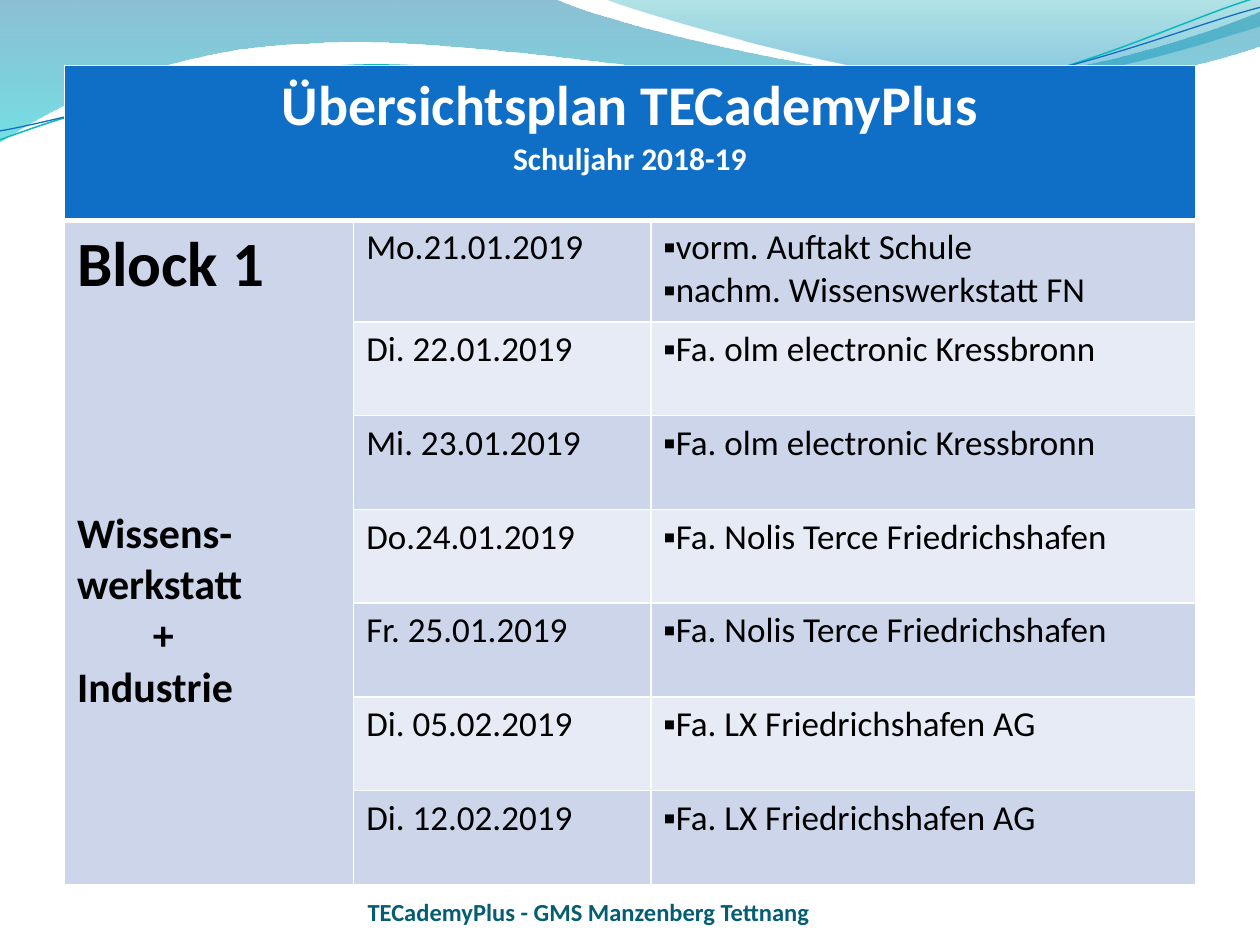
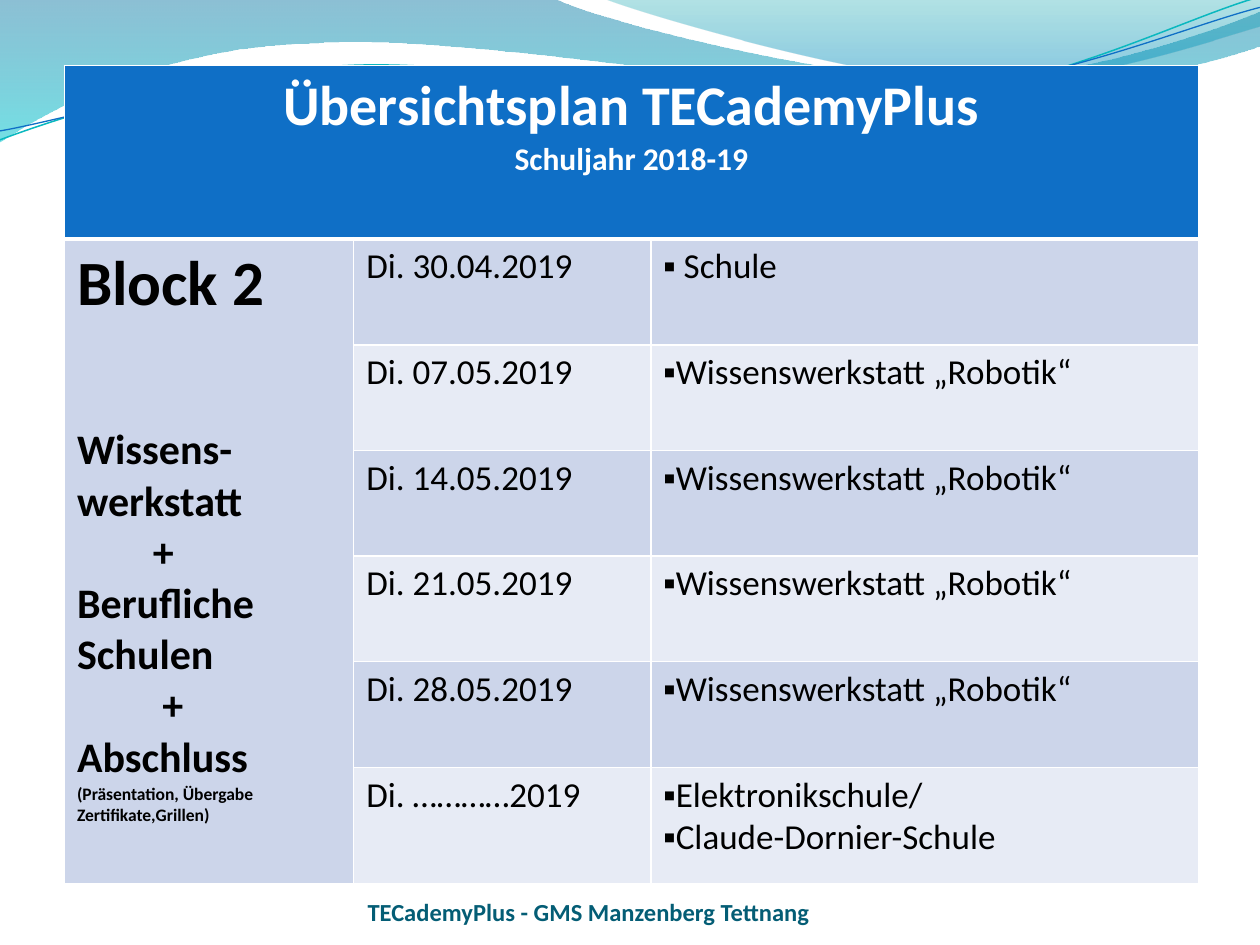
import dataclasses

import pptx
import pptx.dml.color
import pptx.enum.text
import pptx.oxml.ns
import pptx.shapes.autoshape
import pptx.slide
import pptx.table
import pptx.text.text
import pptx.util
from lxml import etree

Cm = pptx.util.Cm
Pt = pptx.util.Pt
RGBColor = pptx.dml.color.RGBColor
qn = pptx.oxml.ns.qn

WHITE = RGBColor(0xFF, 0xFF, 0xFF)
BLACK = RGBColor(0x00, 0x00, 0x00)
BLUE = RGBColor(0x0F, 0x6F, 0xC6)
TURQUOISE = RGBColor(0x0A, 0xB8, 0xBF)
FOOTER_TEAL = RGBColor(0x04, 0x5D, 0x75)
BAND_DARK = RGBColor(0xCC, 0xD5, 0xEA)
BAND_LIGHT = RGBColor(0xE7, 0xEB, 0xF5)
WAVE_BLUE = RGBColor(0x00, 0x74, 0xA1)
WAVE_CYAN = RGBColor(0x00, 0xC6, 0xCF)
WAVE_GREEN = RGBColor(0x00, 0xA1, 0xA9)
WAVE_SKY = RGBColor(0x00, 0x8B, 0xBF)

FONT = "Calibri"
TABLE_LEFT, TABLE_TOP = Cm(1.3), Cm(1.32)
FIRST_COLUMNS = (5.83, 5.99)

Point = tuple[float, float]
# One point is a straight segment, three points are a cubic curve.
Segment = tuple[Point, ...]


@dataclasses.dataclass(frozen=True)
class GradientStop:
    position: float
    color: RGBColor
    opacity: int


@dataclasses.dataclass(frozen=True)
class Wave:
    start: Point
    segments: tuple[Segment, ...]
    stops: tuple[GradientStop, ...] = ()
    line_color: RGBColor | None = None
    line_width: float = 0


@dataclasses.dataclass(frozen=True)
class Line:
    text: str
    size: float = 20
    bold: bool = False
    space_before: float = 0
    indent: float = 0
    bullet: bool = False
    centered: bool = False


@dataclasses.dataclass(frozen=True)
class Day:
    date: str
    activities: tuple[str, ...]


@dataclasses.dataclass(frozen=True)
class Block:
    topics: tuple[Line, ...]
    days: tuple[Day, ...]
    activity_width: float
    row_heights: tuple[float, ...]


WAVES = (
    Wave(
        (0, 0),
        (
            ((11.18, -0.03),),
            ((12.09, 0.43), (16.87, 1.6), (19.25, 1.6)),
            ((21.67, 1.6), (24.33, 0.66), (25.4, 0.23)),
            ((25.43, 0.91),),
            ((24.97, 1.12), (22.1, 1.93), (18.95, 1.9)),
            ((15.8, 1.9), (9.7, 0.71), (6.53, 0.86)),
            ((3.28, 0.91), (1.17, 2.11), (-0.03, 2.87)),
        ),
        stops=(GradientStop(0, WAVE_BLUE, 45), GradientStop(1, WAVE_CYAN, 55)),
    ),
    Wave(
        (12.17, -0.03),
        (
            ((12.93, 0.28), (17.32, 1.57), (19.53, 1.65)),
            ((21.74, 1.75), (24.41, 0.81), (25.4, 0.53)),
            ((25.4, 0),),
        ),
        stops=(GradientStop(0, WAVE_GREEN, 30), GradientStop(0.8, WAVE_SKY, 45)),
    ),
    Wave(
        (0, 2.82),
        (
            ((1.22, 2.36), (4.01, 1.45), (7.04, 1.32)),
            ((10.03, 1.19), (15.06, 2.26), (18.11, 2.03)),
            ((21.16, 1.8), (23.83, 0.38), (25.35, -0.05)),
        ),
        line_color=TURQUOISE,
        line_width=0.85,
    ),
    Wave(
        (0, 2.64),
        (
            ((1.19, 2.44), (4.17, 1.55), (7.19, 1.42)),
            ((10.24, 1.3), (15.16, 2.13), (18.21, 1.91)),
            ((21.23, 1.7), (23.9, 0.53), (25.4, 0.15)),
        ),
        line_color=BLUE,
        line_width=0.75,
    ),
)

TITLE = (
    Line("Übersichtsplan TECademyPlus", 32, True, centered=True),
    Line("Schuljahr 2018-19", 18, True, centered=True),
)
FOOTER = (Line("TECademyPlus - GMS Manzenberg Tettnang", 14, True),)

ELECTRONICS_FIRM = ("Fa. olm electronic Kressbronn",)
ENGINE_FIRM = ("Fa. Nolis Terce Friedrichshafen",)
GEAR_FIRM = ("Fa. LX Friedrichshafen AG",)
ROBOTICS = ("Wissenswerkstatt „Robotik“",)

BLOCKS = (
    Block(
        topics=(
            Line("Block 1", 36, True),
            Line("Wissens-", 24, True, space_before=117),
            Line("werkstatt", 24, True),
            Line("+", 24, True, indent=1.53),
            Line("Industrie", 24, True),
        ),
        days=(
            Day("Mo.21.01.2019", ("vorm. Auftakt Schule", "nachm. Wissenswerkstatt FN")),
            Day("Di. 22.01.2019", ELECTRONICS_FIRM),
            Day("Mi. 23.01.2019", ELECTRONICS_FIRM),
            Day("Do.24.01.2019", ENGINE_FIRM),
            Day("Fr. 25.01.2019", ENGINE_FIRM),
            Day("Di. 05.02.2019", GEAR_FIRM),
            Day("Di. 12.02.2019", GEAR_FIRM),
        ),
        activity_width=10.98,
        row_heights=(3.12, 2.05, *[1.89] * 6),
    ),
    Block(
        topics=(
            Line("Block 2", 36, True),
            Line("Wissens-", 24, True, space_before=58.5),
            Line("werkstatt", 24, True),
            Line("+", 24, True, indent=1.53),
            Line("Berufliche Schulen", 24, True),
            Line("+", 24, True, indent=1.72),
            Line("Abschluss", 24, True),
            Line("(Präsentation, Übergabe Zertifikate,Grillen)", 10, True),
        ),
        days=(
            Day("Di. 30.04.2019", (" Schule",)),
            Day("Di. 07.05.2019", ROBOTICS),
            Day("Di. 14.05.2019", ROBOTICS),
            Day("Di. 21.05.2019", ROBOTICS),
            Day("Di. 28.05.2019", ROBOTICS),
            Day("Di. …………2019", ("Elektronikschule/", "Claude-Dornier-Schule")),
        ),
        activity_width=11.04,
        row_heights=(3.5, *[2.13] * 5, 2.35),
    ),
)


def bend_segments(shape: pptx.shapes.autoshape.Shape, segments: tuple[Segment, ...]) -> None:
    """Turn each run of three straight lines that stands for a curve into a cubic."""
    lines = iter(list(shape._element.iter(qn("a:lnTo"))))
    for segment in segments:
        first, *others = [next(lines) for _ in segment]
        if others:
            first.tag = qn("a:cubicBezTo")
        for line in others:
            first.append(line[0])
            line.getparent().remove(line)


def draw_wave(slide: pptx.slide.Slide, wave: Wave) -> None:
    points = [(Cm(x), Cm(y)) for segment in wave.segments for x, y in segment]
    builder = slide.shapes.build_freeform(*[Cm(value) for value in wave.start])
    builder.add_line_segments(points, close=bool(wave.stops))
    shape = builder.convert_to_shape()
    bend_segments(shape, wave.segments)
    shape.shadow.inherit = False
    if wave.line_color is not None:
        shape.fill.background()
        shape.line.color.rgb = wave.line_color
        shape.line.width = Pt(wave.line_width)
        return
    shape.line.fill.background()
    shape.fill.gradient()
    shape.fill.gradient_angle = 270
    for gradient_stop, stop in zip(shape.fill.gradient_stops, wave.stops):
        gradient_stop.position = stop.position
        gradient_stop.color.rgb = stop.color
    colors = shape._element.spPr.iter(qn("a:srgbClr"))
    for color, stop in zip(colors, wave.stops):
        etree.SubElement(color, qn("a:alpha")).set("val", str(stop.opacity * 1000))


def write_lines(
    text_frame: pptx.text.text.TextFrame, lines: tuple[Line, ...], color: RGBColor
) -> None:
    for index, line in enumerate(lines):
        paragraph = text_frame.add_paragraph() if index else text_frame.paragraphs[0]
        paragraph.text = line.text
        paragraph.font.name = FONT
        paragraph.font.size = Pt(line.size)
        paragraph.font.bold = line.bold
        paragraph.font.color.rgb = color
        paragraph.space_before = Pt(line.space_before)
        if line.centered:
            paragraph.alignment = pptx.enum.text.PP_ALIGN.CENTER
        properties = paragraph._p.get_or_add_pPr()
        properties.set("marL", str(Cm(line.indent)))
        properties.set("indent", "0")
        if line.bullet:
            defaults = properties.find(qn("a:defRPr"))
            defaults.addprevious(etree.Element(qn("a:buFont"), typeface=FONT))
            defaults.addprevious(etree.Element(qn("a:buChar"), char="▪"))


def style_cell(cell: pptx.table._Cell, row: int) -> None:
    """Fill the cell by its row and give it white borders, thicker under the title."""
    properties = cell._tc.get_or_add_tcPr()
    widths = {"L": 1, "R": 1, "T": 3 if row == 1 else 1, "B": 3 if row == 0 else 1}
    for side, width in widths.items():
        border = etree.SubElement(properties, qn(f"a:ln{side}"), w=str(Pt(width)))
        fill = etree.SubElement(border, qn("a:solidFill"))
        etree.SubElement(fill, qn("a:srgbClr"), val=str(WHITE))
    cell.fill.solid()
    band = BAND_DARK if row % 2 else BAND_LIGHT
    cell.fill.fore_color.rgb = BLUE if row == 0 else band


def draw_schedule(slide: pptx.slide.Slide, block: Block) -> None:
    widths = (*FIRST_COLUMNS, block.activity_width)
    heights = block.row_heights
    table = slide.shapes.add_table(
        len(heights), len(widths), TABLE_LEFT, TABLE_TOP, Cm(sum(widths)), Cm(sum(heights))
    ).table
    table.horz_banding = False
    for column, width in zip(table.columns, widths):
        column.width = Cm(width)
    for index, (row, height) in enumerate(zip(table.rows, heights)):
        row.height = Cm(height)
        for cell in row.cells:
            style_cell(cell, index)

    table.cell(0, 0).merge(table.cell(0, len(widths) - 1))
    table.cell(1, 0).merge(table.cell(len(heights) - 1, 0))
    write_lines(table.cell(0, 0).text_frame, TITLE, WHITE)
    write_lines(table.cell(1, 0).text_frame, block.topics, BLACK)
    for index, day in enumerate(block.days, start=1):
        activities = tuple(Line(activity, bullet=True) for activity in day.activities)
        write_lines(table.cell(index, 1).text_frame, (Line(day.date),), BLACK)
        write_lines(table.cell(index, 2).text_frame, activities, BLACK)


def draw_footer(slide: pptx.slide.Slide) -> None:
    text_frame = slide.shapes.add_textbox(Cm(7.41), Cm(17.65), Cm(9.32), Cm(1.02)).text_frame
    text_frame.word_wrap = True
    text_frame.vertical_anchor = pptx.enum.text.MSO_ANCHOR.BOTTOM
    text_frame.margin_left = text_frame.margin_right = 0
    text_frame.margin_top = text_frame.margin_bottom = 0
    write_lines(text_frame, FOOTER, FOOTER_TEAL)


def main() -> None:
    presentation = pptx.Presentation()
    presentation.slide_width, presentation.slide_height = Cm(25.4), Cm(19.05)
    for block in BLOCKS:
        slide = presentation.slides.add_slide(presentation.slide_layouts[6])
        for wave in WAVES:
            draw_wave(slide, wave)
        draw_schedule(slide, block)
        draw_footer(slide)
    presentation.save("out.pptx")


if __name__ == "__main__":
    main()
